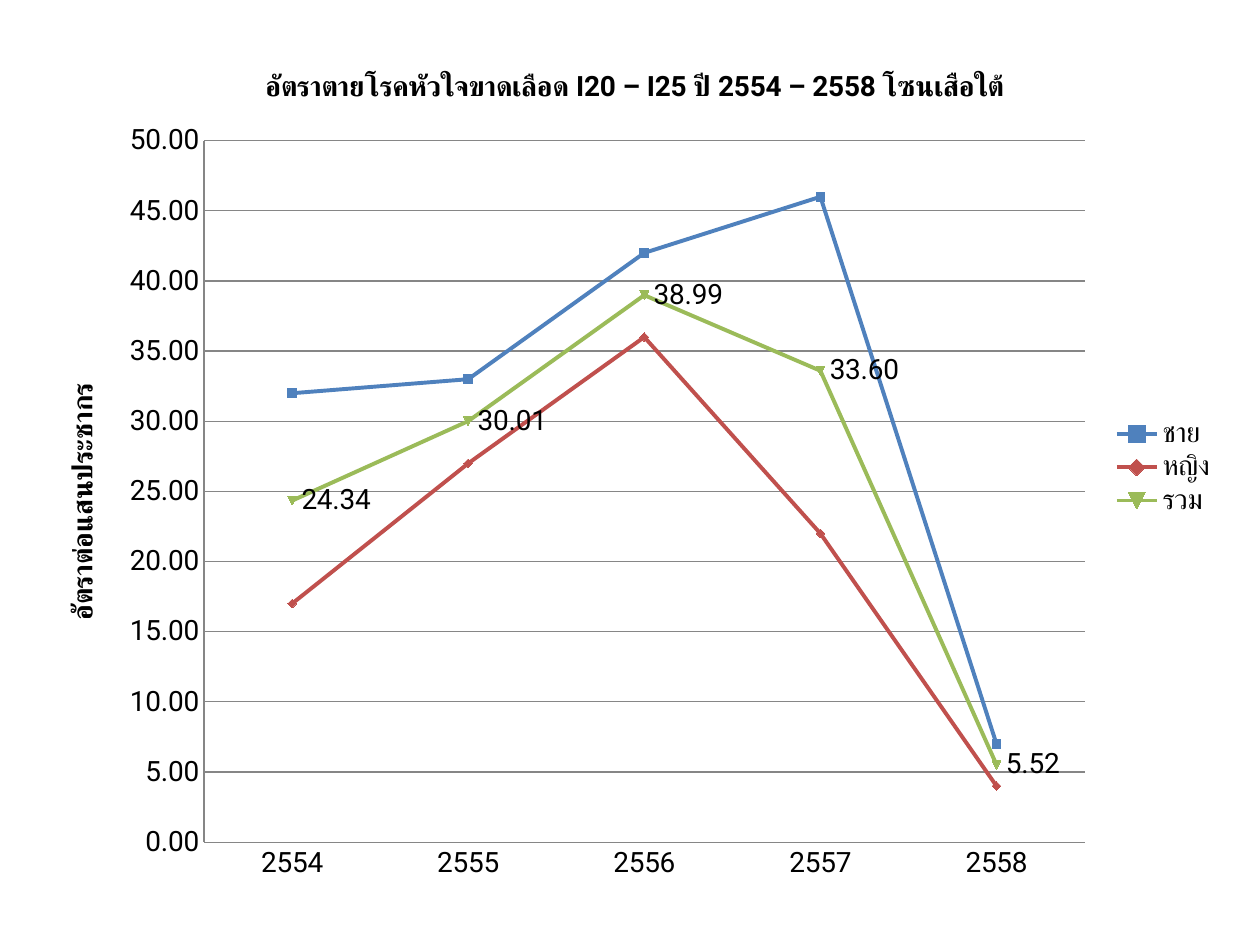
from lxml.etree import SubElement
from pptx import Presentation
from pptx.chart.data import CategoryChartData
from pptx.dml.color import RGBColor
from pptx.enum.chart import XL_CHART_TYPE as ChartType
from pptx.enum.chart import XL_LABEL_POSITION as LabelPosition
from pptx.enum.chart import XL_LEGEND_POSITION as LegendPosition
from pptx.enum.chart import XL_TICK_MARK as TickMark
from pptx.oxml.ns import qn
from pptx.util import Inches, Pt

BLACK = RGBColor(0x00, 0x00, 0x00)
GRAY = RGBColor(0x86, 0x86, 0x86)
BLUE = RGBColor(0x4F, 0x81, 0xBD)
RED = RGBColor(0xC0, 0x50, 0x4D)
GREEN = RGBColor(0x9B, 0xBB, 0x59)

TITLE = "อัตราตายโรคหัวใจขาดเลือด I20 – I25 ปี 2554 – 2558 โซนเสือใต้"
AXIS_TITLE = "อัตราต่อแสนประชากร"
YEARS = ["2554", "2555", "2556", "2557", "2558"]
RATES = {
    "ชาย": (BLUE, [32, 33, 42, 46, 7]),
    "หญิง": (RED, [17, 27, 36, 22, 4]),
    "รวม": (GREEN, [24.34, 30.01, 38.99, 33.60, 5.52]),
}
TEXT_FORMAT = {"name": "Roboto", "size": Pt(16)}
CHART_PERCENT = (3.1, 4.13, 94.5, 90.67)
PLOT_PERCENT = {"x": 13.87, "y": 11.87, "w": 73.95, "h": 81.88}


def set_values(target, values):
    """Set each attribute of the target from a dict."""
    for name, value in values.items():
        setattr(target, name, value)


def format_font(font, bold=False):
    """Give a font the chart's text format."""
    set_values(font, TEXT_FORMAT | {"bold": bold})
    font.color.rgb = BLACK


def write_title(title, text):
    """Write bold text in a chart title or an axis title."""
    run = title.text_frame.paragraphs[0].add_run()
    run.text = text
    format_font(run.font, bold=True)


def place_plot(chart, percent):
    """Place the inner plot area by percentages of the chart's size."""
    plot_area = chart.element.find(".//" + qn("c:plotArea"))
    for layout in plot_area.findall(qn("c:layout")):
        plot_area.remove(layout)
    layout = SubElement(plot_area, qn("c:layout"))
    plot_area.insert(0, layout)
    manual = SubElement(layout, qn("c:manualLayout"))
    settings = {"layoutTarget": "inner", "xMode": "edge", "yMode": "edge"}
    settings |= {name: value / 100 for name, value in percent.items()}
    for name, value in settings.items():
        SubElement(manual, qn(f"c:{name}")).set("val", str(value))


def format_axes(chart):
    """Format both axes and the gridlines."""
    for axis in (chart.category_axis, chart.value_axis):
        set_values(axis, {"major_tick_mark": TickMark.NONE,
                          "minor_tick_mark": TickMark.NONE})
        format_font(axis.tick_labels.font)
        axis.format.line.color.rgb = GRAY
    axis = chart.value_axis
    set_values(axis, {"minimum_scale": 0, "maximum_scale": 50, "major_unit": 5,
                      "has_major_gridlines": True})
    axis.major_gridlines.format.line.color.rgb = GRAY
    set_values(axis.tick_labels, {"number_format": "0.00",
                                  "number_format_is_linked": False})
    write_title(axis.axis_title, AXIS_TITLE)


def format_series(chart):
    """Colour the lines and label the total."""
    for series, (color, _) in zip(chart.plots[0].series, RATES.values()):
        series.smooth = False
        series.format.line.color.rgb = color
        series.format.line.width = Pt(2.25)
        series.marker.size = 5
        series.marker.format.fill.solid()
        series.marker.format.fill.fore_color.rgb = color
        series.marker.format.line.color.rgb = color
    labels = series.data_labels
    set_values(labels, {"show_value": True, "number_format": "0.00",
                        "number_format_is_linked": False,
                        "position": LabelPosition.RIGHT})
    format_font(labels.font)


def add_rate_chart(slide, left, top, width, height):
    """Add the line chart of death rates in the given box."""
    data = CategoryChartData(number_format="0.00")
    data.categories = YEARS
    for name, (_, values) in RATES.items():
        data.add_series(name, values)
    chart = slide.shapes.add_chart(
        ChartType.LINE_MARKERS, left, top, width, height, data).chart
    set_values(chart.font, {"name": "Calibri", "size": Pt(10)})
    chart.plots[0].vary_by_categories = False
    write_title(chart.chart_title, TITLE)
    chart.has_legend = True
    set_values(chart.legend, {"position": LegendPosition.RIGHT,
                              "include_in_layout": False})
    format_font(chart.legend.font)
    format_axes(chart)
    format_series(chart)
    place_plot(chart, PLOT_PERCENT)


def main():
    """Build the presentation and save it."""
    presentation = Presentation()
    set_values(presentation, {"slide_width": Inches(10),
                              "slide_height": Inches(7.5)})
    slide = presentation.slides.add_slide(presentation.slide_layouts[6])
    sizes = (presentation.slide_width, presentation.slide_height) * 2
    add_rate_chart(slide, *(int(percent * size / 100)
                            for percent, size in zip(CHART_PERCENT, sizes)))
    presentation.save("out.pptx")


if __name__ == "__main__":
    main()
